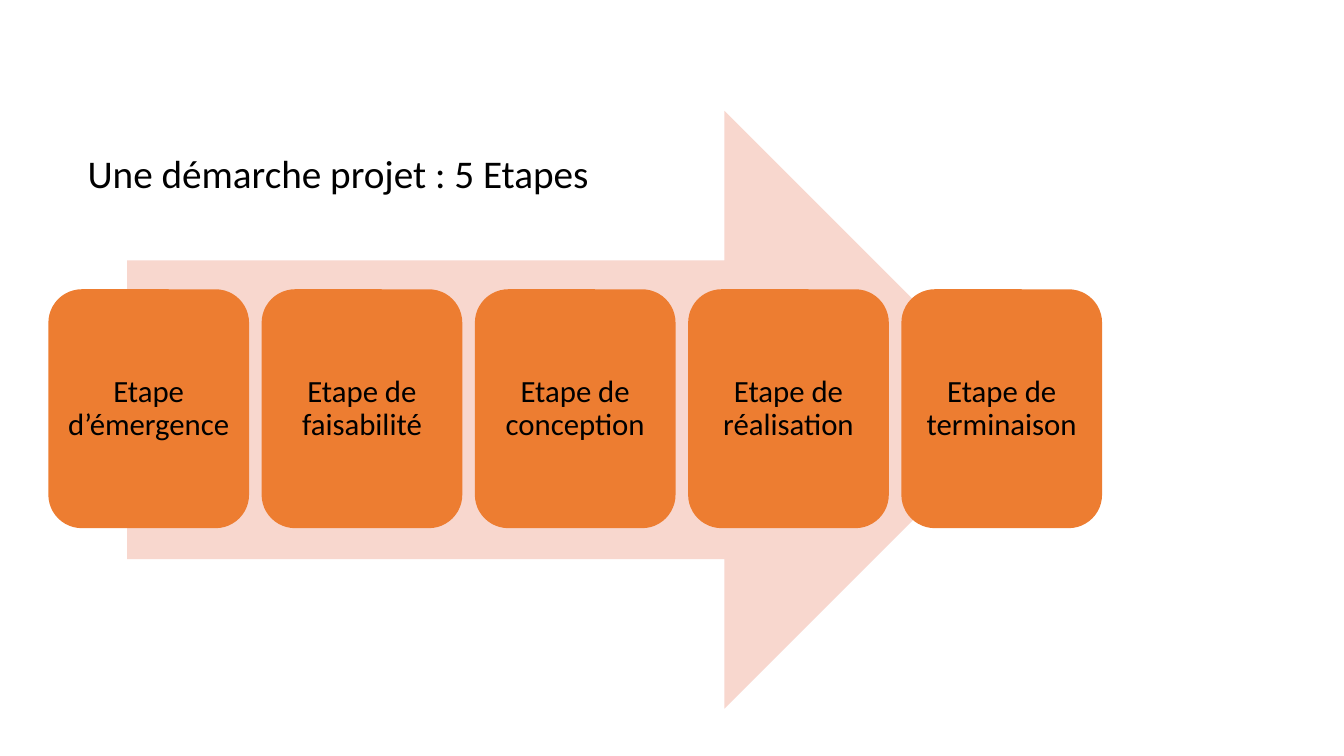
import pptx
import pptx.util
import pptx.dml.color
import pptx.enum.shapes
import pptx.enum.text

TITLE = "Une démarche projet : 5 Etapes"
STEPS = [
    "Etape d’émergence",
    "Etape de faisabilité",
    "Etape de conception",
    "Etape de réalisation",
    "Etape de terminaison",
]
THEME = {
    "font": "Calibri",
    "title": 28,
    "step": 22,
    "ink": "000000",
    "box": "ED7D31",
    "arrow": "F8D7CE",
}
ARROW = (1.26, 1.1, 8.89, 5.93)
HEAD = (0.77, 1.43, 7.09, 0.57)
LEFT, TOP, WIDTH, HEIGHT = 0.48, 2.87, 1.99, 2.37
PITCH = 2.115
INSET = 0.09

Inches = pptx.util.Inches
KINDS = pptx.enum.shapes.MSO_SHAPE


def color(name):
    return pptx.dml.color.RGBColor.from_string(THEME[name])


def add_block(slide, kind, area, fill):
    shape = slide.shapes.add_shape(kind, *map(Inches, area))
    shape.shadow.inherit = False
    shape.fill.solid()
    shape.fill.fore_color.rgb = color(fill)
    shape.line.fill.background()
    return shape


def write(frame, text, size):
    frame.word_wrap = True
    frame.text = text
    para = frame.paragraphs[0]
    font = para.runs[0].font
    font.name = THEME["font"]
    font.size = pptx.util.Pt(THEME[size])
    font.color.rgb = color("ink")
    return para


def add_step(slide, index, text):
    area = (LEFT + index * PITCH, TOP, WIDTH, HEIGHT)
    frame = add_block(slide, KINDS.ROUNDED_RECTANGLE, area, "box").text_frame
    frame.margin_left = frame.margin_right = Inches(INSET)
    frame.margin_top = frame.margin_bottom = Inches(INSET)
    frame.vertical_anchor = pptx.enum.text.MSO_ANCHOR.MIDDLE
    para = write(frame, text, "step")
    para.alignment = pptx.enum.text.PP_ALIGN.CENTER
    para.line_spacing = 0.9


def main():
    deck = pptx.Presentation()
    deck.slide_width, deck.slide_height = Inches(13.33), Inches(7.5)
    slide = deck.slides.add_slide(deck.slide_layouts[6])
    add_block(slide, KINDS.RIGHT_ARROW, ARROW, "arrow")
    for index, text in enumerate(STEPS):
        add_step(slide, index, text)
    head = slide.shapes.add_textbox(*map(Inches, HEAD))
    write(head.text_frame, TITLE, "title")
    deck.save("out.pptx")


if __name__ == "__main__":
    main()
